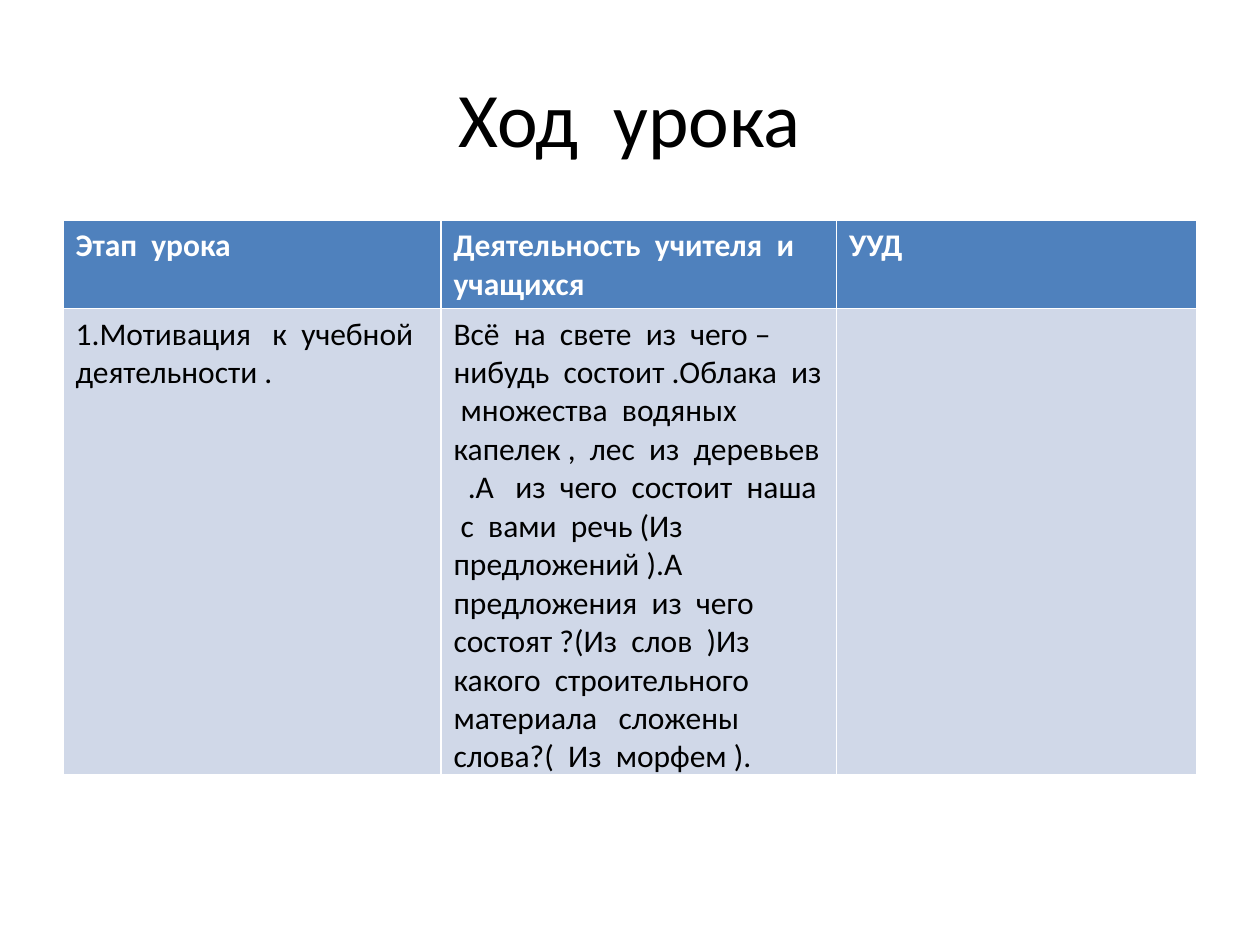
from pptx import Presentation
from pptx.dml.color import RGBColor
from pptx.enum.text import MSO_ANCHOR as Anchor, PP_ALIGN as Align
from pptx.util import Pt

TITLE = "Ход  урока"
ROWS = [
    ("Этап  урока", "Деятельность  учителя  и  учащихся", "УУД"),
    (
        "1.Мотивация   к  учебной  деятельности .",
        "Всё  на  свете  из  чего – нибудь  состоит .Облака  из  множества  водяных  "
        "капелек ,  лес  из  деревьев   .А   из  чего  состоит  наша  с  вами  речь "
        "(Из  предложений ).А предложения  из  чего  состоят ?(Из  слов  )Из  какого  "
        "строительного  материала   сложены  слова?(  Из  морфем ).",
        "",
    ),
]
COLUMN_WIDTHS = (216, 226.08, 205.92)
ROW_HEIGHT = 29.2
LEFT, WIDTH = 36, 648

BLACK = RGBColor(0x00, 0x00, 0x00)
WHITE = RGBColor(0xFF, 0xFF, 0xFF)
HEADER_BLUE = RGBColor(0x4F, 0x81, 0xBD)
BODY_BLUE = RGBColor(0xD0, 0xD8, 0xE8)


def write(frame, text, size=18, color=BLACK, bold=False, align=Align.LEFT):
    para = frame.paragraphs[0]
    para.alignment = align
    para.font.size = Pt(size)
    if text:
        span = para.add_run()
        span.text = text
        span.font.name = "Calibri"
        span.font.size = Pt(size)
        span.font.bold = bold
        span.font.color.rgb = color


def add_title(page):
    box = page.shapes.add_textbox(Pt(LEFT), Pt(21.6), Pt(WIDTH), Pt(90))
    box.text_frame.word_wrap = True
    box.text_frame.vertical_anchor = Anchor.MIDDLE
    write(box.text_frame, TITLE, size=44, align=Align.CENTER)


def add_lesson_table(page):
    table = page.shapes.add_table(
        len(ROWS), len(COLUMN_WIDTHS),
        Pt(LEFT), Pt(126), Pt(WIDTH), Pt(ROW_HEIGHT * len(ROWS)),
    ).table
    for column, width in zip(table.columns, COLUMN_WIDTHS):
        column.width = Pt(width)
    for row_index, texts in enumerate(ROWS):
        header = row_index == 0
        for column_index, text in enumerate(texts):
            cell = table.cell(row_index, column_index)
            cell.fill.solid()
            cell.fill.fore_color.rgb = HEADER_BLUE if header else BODY_BLUE
            write(cell.text_frame, text, color=WHITE if header else BLACK, bold=header)


def main():
    deck = Presentation()
    deck.slide_width, deck.slide_height = Pt(720), Pt(540)
    page = deck.slides.add_slide(deck.slide_layouts[6])
    add_title(page)
    add_lesson_table(page)
    deck.save("out.pptx")


if __name__ == "__main__":
    main()
